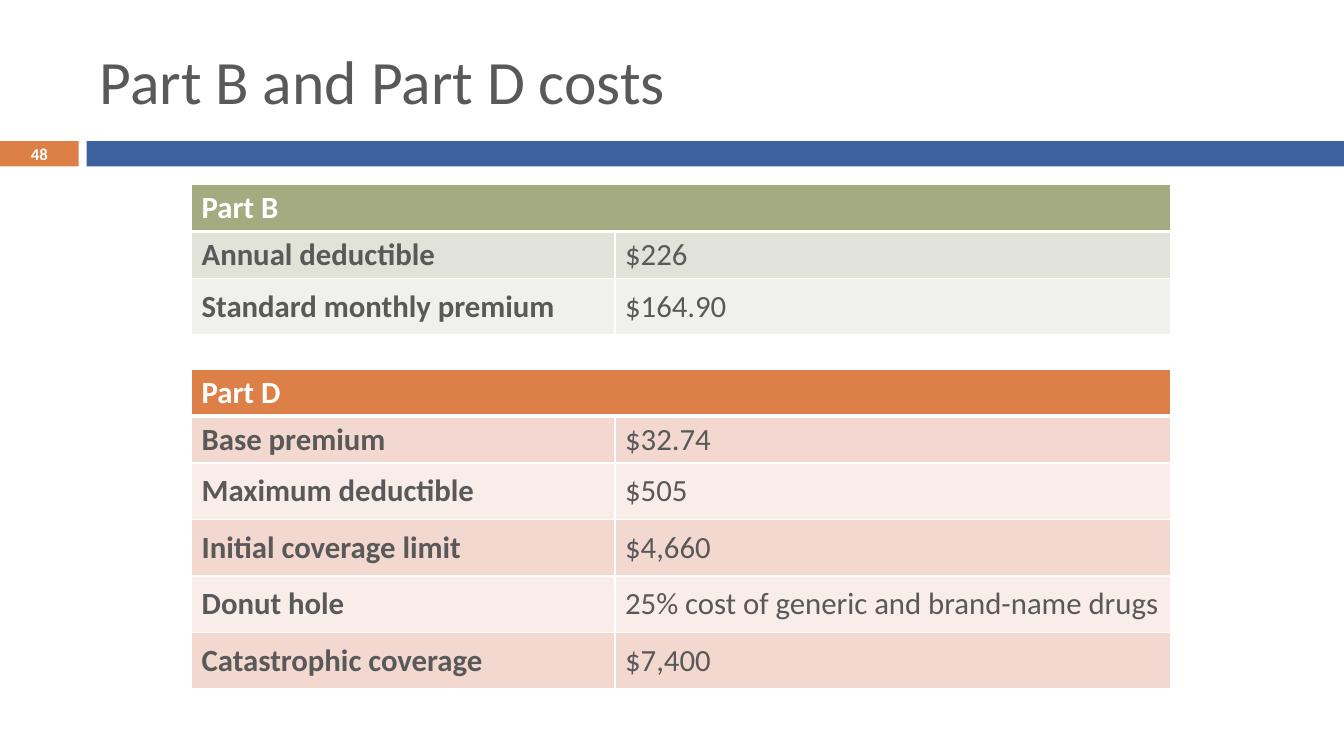
import pptx
import pptx.dml.color
import pptx.enum.shapes
import pptx.enum.text
import pptx.oxml
import pptx.oxml.ns
import pptx.util

Inches = pptx.util.Inches
MIDDLE = pptx.enum.text.MSO_ANCHOR.MIDDLE
CENTER = pptx.enum.text.PP_ALIGN.CENTER

COLORS = {
    "white": "FFFFFF", "text": "595959", "blue": "3C619E", "orange": "DD8047",
    "green": "A5AB81", "green_dark": "E1E2D8", "green_light": "F0F1ED",
    "orange_dark": "F2D8CF", "orange_light": "F9EDE9",
}
PART_B = [
    ("Annual deductible", "$226"),
    ("Standard monthly premium", "$164.90"),
]
PART_D = [
    ("Base premium", "$32.74"),
    ("Maximum deductible", "$505"),
    ("Initial coverage limit", "$4,660"),
    ("Donut hole", "25% cost of generic and brand-name drugs"),
    ("Catastrophic coverage", "$7,400"),
]
COLUMN_WIDTHS = (4.2, 5.51)
SHORT_ROW, TALL_ROW = 0.44, 0.56


def rgb(name):
    return pptx.dml.color.RGBColor.from_string(COLORS[name])


def write(tf, text, size, color, bold=False, align=None):
    p = tf.paragraphs[0]
    p.text = text
    p.alignment = align
    p.font.name = "Calibri"
    p.font.size = pptx.util.Pt(size)
    p.font.bold = bold
    p.font.color.rgb = rgb(color)


def add_bar(s, left, width, color):
    sp = s.shapes.add_shape(pptx.enum.shapes.MSO_SHAPE.RECTANGLE,
                            Inches(left), Inches(1.4), Inches(width), Inches(0.25))
    sp.shadow.inherit = False
    sp.fill.solid()
    sp.fill.fore_color.rgb = rgb(color)
    sp.line.fill.background()


def add_text(s, left, top, width, height, *args, **kwargs):
    tf = s.shapes.add_textbox(Inches(left), Inches(top), Inches(width), Inches(height)).text_frame
    tf.word_wrap = True
    tf.vertical_anchor = MIDDLE
    write(tf, *args, **kwargs)


def set_borders(cell, bottom):
    """Draw white borders, 1 pt wide except for the bottom one."""
    props = cell._tc.get_or_add_tcPr()
    widths = {"lnL": 1, "lnR": 1, "lnT": 1, "lnB": bottom}
    for i, (tag, width) in enumerate(widths.items()):
        props.insert(i, pptx.oxml.parse_xml(
            f'<a:{tag} {pptx.oxml.ns.nsdecls("a")} w="{pptx.util.Pt(width)}"><a:solidFill>'
            f'<a:srgbClr val="{COLORS["white"]}"/></a:solidFill></a:{tag}>'))


def fill_cell(cell, text, fill, color, bold, bottom=1):
    cell.fill.solid()
    cell.fill.fore_color.rgb = rgb(fill)
    cell.vertical_anchor = MIDDLE
    write(cell.text_frame, text, 22, color, bold)
    set_borders(cell, bottom)


def add_cost_table(s, top, heading, costs, hue):
    heights = [SHORT_ROW] * 2 + [TALL_ROW] * (len(costs) - 1)
    table = s.shapes.add_table(len(heights), 2, Inches(1.9), Inches(top),
                               Inches(sum(COLUMN_WIDTHS)), Inches(sum(heights))).table
    for column, width in zip(table.columns, COLUMN_WIDTHS):
        column.width = Inches(width)
    for row, height in zip(table.rows, heights):
        row.height = Inches(height)
    table.cell(0, 0).merge(table.cell(0, 1))
    for col, text in enumerate((heading, "")):
        fill_cell(table.cell(0, col), text, hue, "white", True, bottom=3)
    for row, cost in enumerate(costs, 1):
        shade = f"{hue}_dark" if row % 2 else f"{hue}_light"
        for col, text in enumerate(cost):
            fill_cell(table.cell(row, col), text, shade, "text", col == 0)


def main():
    prs = pptx.Presentation()
    prs.slide_width, prs.slide_height = Inches(13.33), Inches(7.5)
    s = prs.slides.add_slide(prs.slide_layouts[6])
    add_bar(s, 0, 0.78, "orange")
    add_bar(s, 0.86, 12.47, "blue")
    add_text(s, 0.89, 0.25, 11.89, 1.08, "Part B and Part D costs", 44, "text")
    add_text(s, 0, 1.39, 0.78, 0.27, "48", 11.9, "white", bold=True, align=CENTER)
    add_cost_table(s, 1.83, "Part B", PART_B, "green")
    add_cost_table(s, 3.66, "Part D", PART_D, "orange")
    prs.save("out.pptx")


if __name__ == "__main__":
    main()
